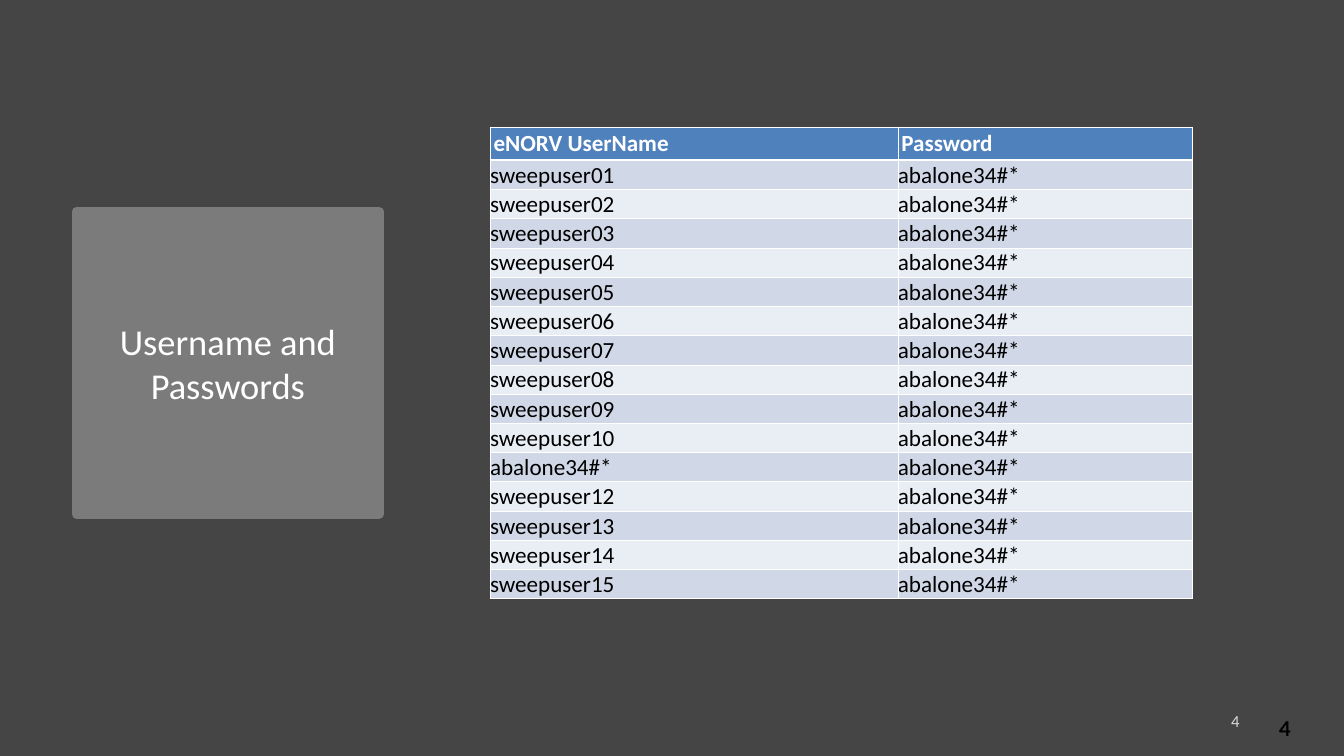
from lxml.etree import SubElement as Sub
from pptx import Presentation
from pptx.dml.color import RGBColor as RGB
from pptx.enum.text import MSO_ANCHOR as Anchor, MSO_AUTO_SIZE as Auto, PP_ALIGN as Align
from pptx.oxml.ns import qn
from pptx.util import Pt

DARK = RGB(0x45, 0x45, 0x45)
GREY = RGB(0x7B, 0x7B, 0x7B)
WHITE = RGB(0xFF, 0xFF, 0xFF)
BLACK = RGB(0, 0, 0)
BLUE = RGB(0x4F, 0x81, 0xBD)
BANDS = [RGB(0xE9, 0xED, 0xF4), RGB(0xD0, 0xD8, 0xE8)]


def style(frame, size, color, bold=False, align=Align.LEFT, face="Calibri"):
    para = frame.paragraphs[0]
    para.alignment = align
    font = para.runs[0].font
    font.name, font.size, font.bold = face, Pt(size), bold
    font.color.rgb = color


def pad(item, x, y):
    item.margin_left = item.margin_right = Pt(x)
    item.margin_top = item.margin_bottom = Pt(y)


deck = Presentation()
deck.slide_width, deck.slide_height = Pt(1919.52), Pt(1080)
slide = deck.slides.add_slide(deck.slide_layouts[5])
slide.background.fill.solid()
slide.background.fill.fore_color.rgb = DARK

page = slide.shapes.add_textbox(Pt(1802.88), Pt(1015.92), Pt(64.8), Pt(49.68))
frame = page.text_frame
frame.text = "4"
frame.word_wrap = False
pad(frame, 14.4, 7.2)
style(frame, 29, BLACK, True, Align.CENTER, "Lato")

title = slide.shapes.title
title.left, title.top = Pt(109.44), Pt(302.4)
title.width = title.height = Pt(432)
geom = Sub(title._element.spPr, qn("a:prstGeom"), prst="ellipse")
Sub(geom, qn("a:avLst"))
title.fill.solid()
title.fill.fore_color.rgb = GREY
title.line.color.rgb = GREY
title.line.width = Pt(13.75)
Sub(title.line._get_or_add_ln(), qn("a:round"))
frame = title.text_frame
frame.text = "Username and Passwords"
frame.auto_size = Auto.NONE
frame.word_wrap = True
frame.vertical_anchor = Anchor.MIDDLE
pad(frame, 17.28, 8.64)
style(frame, 52, WHITE, align=Align.CENTER)

count = slide.shapes.add_textbox(Pt(1355.76), Pt(1000.8), Pt(432), Pt(57.6))
frame = count.text_frame
frame.text = "4"
frame.word_wrap = True
frame.vertical_anchor = Anchor.MIDDLE
pad(frame, 17.28, 8.64)
style(frame, 24, WHITE, align=Align.RIGHT)
frame.paragraphs[0].space_after = Pt(6)
tint = next(frame._txBody.iter(qn("a:srgbClr")))
Sub(tint, qn("a:alpha"), val="80000")

word = "abalone34#*"
names = [f"sweepuser{n:02}" for n in range(1, 16)]
names[10] = word
rows = [("eNORV UserName", "Password")] + [(name, word) for name in names]

table = slide.shapes.add_table(len(rows), 2, Pt(699.84), Pt(181.44), Pt(1002.96), Pt(673.92)).table
for col, width in zip(table.columns, (582.48, 420.48)):
    col.width = Pt(width)

for r, row in enumerate(rows):
    head = r == 0
    table.rows[r].height = Pt(47.52 if head else 41.76)
    for c, text in enumerate(row):
        cell = table.cell(r, c)
        cell.text = text
        cell.vertical_anchor = Anchor.TOP if head else Anchor.BOTTOM
        pad(cell, 5.04 if head else 0, 2.88 if head else 0)
        style(cell.text_frame, 33, WHITE if head else BLACK, head)
        for side in "LRTB":
            thick = (r, side) in [(0, "B"), (1, "T")]
            edge = Sub(cell._tc.get_or_add_tcPr(), qn("a:ln" + side), w=str(Pt(3 if thick else 1)))
            Sub(Sub(edge, qn("a:solidFill")), qn("a:srgbClr"), val=str(WHITE))
        cell.fill.solid()
        cell.fill.fore_color.rgb = BLUE if head else BANDS[r % 2]

deck.save("out.pptx")
